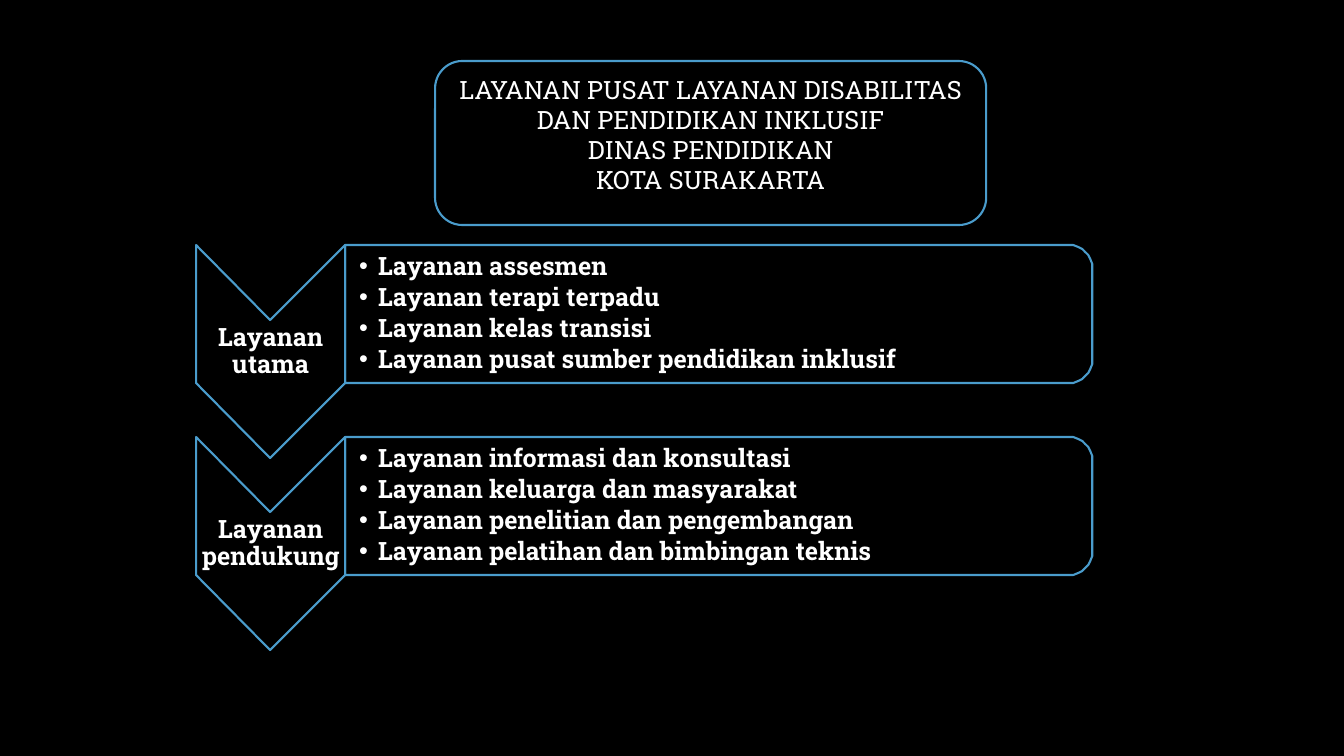
import math

from lxml import etree
from pptx import Presentation
from pptx.dml.color import RGBColor
from pptx.enum.shapes import MSO_SHAPE
from pptx.enum.text import MSO_ANCHOR, MSO_AUTO_SIZE, PP_ALIGN
from pptx.oxml.ns import qn
from pptx.util import Inches, Pt

ROUNDED = MSO_SHAPE.ROUNDED_RECTANGLE
TOP, MIDDLE = MSO_ANCHOR.TOP, MSO_ANCHOR.MIDDLE
LEFT, CENTER = PP_ALIGN.LEFT, PP_ALIGN.CENTER
NO_AUTOFIT = MSO_AUTO_SIZE.NONE

BLACK = RGBColor(0x00, 0x00, 0x00)
WHITE = RGBColor(0xFF, 0xFF, 0xFF)
BLUE = RGBColor(0x4A, 0x9C, 0xCC)
FONT = "Roboto Slab"
EMU_PER_PX = 914400 / 100.8
TWO_CONTENT_LAYOUT = 3

TITLE_BOX = (435, 61, 551, 164)
TITLE_CORNER_INSET = 8
CHEVRON_LEFT, CHEVRON_WIDTH, CHEVRON_POINT = 196, 149, 75
PANEL_LEFT, PANEL_WIDTH, PANEL_RADIUS = CHEVRON_LEFT + CHEVRON_WIDTH, 747, 23
FIRST_TOP, ROW_HEIGHT, ROW_PITCH = 245, 138, 192
BULLET_INDENT = 19

TITLE = [
    "LAYANAN PUSAT LAYANAN DISABILITAS DAN PENDIDIKAN INKLUSIF",
    "DINAS PENDIDIKAN",
    "KOTA SURAKARTA",
]
SERVICES = [
    ("Layanan utama", [
        "Layanan assesmen",
        "Layanan terapi terpadu",
        "Layanan kelas transisi",
        "Layanan pusat sumber pendidikan inklusif",
    ]),
    ("Layanan pendukung", [
        "Layanan informasi dan konsultasi",
        "Layanan keluarga dan masyarakat",
        "Layanan penelitian dan pengembangan",
        "Layanan pelatihan dan bimbingan teknis",
    ]),
]


def px(length):
    return round(length * EMU_PER_PX)


def place(shape, left, top, width, height):
    shape.left, shape.top = px(left), px(top)
    shape.width, shape.height = px(width), px(height)


def outline(shape):
    shape.shadow.inherit = False
    shape.fill.background()
    shape.line.color.rgb = BLUE
    shape.line.width = Pt(1.5)


def add_polygon(slide, points):
    builder = slide.shapes.build_freeform(*points[0], scale=EMU_PER_PX)
    builder.add_line_segments(points[1:], close=True)
    shape = builder.convert_to_shape()
    outline(shape)
    return shape


def write_text(shape, lines, anchor, alignment, insets, bold=True,
               line_spacing=0.9, space_after=0):
    """Fill the shape with one paragraph per line; insets are left, top, right, bottom in px."""
    frame = shape.text_frame
    frame.text = "\n".join(lines)
    frame.word_wrap = True
    frame.auto_size = NO_AUTOFIT
    frame.vertical_anchor = anchor
    (frame.margin_left, frame.margin_top,
     frame.margin_right, frame.margin_bottom) = map(px, insets)
    for paragraph in frame.paragraphs:
        paragraph.alignment = alignment
        paragraph.line_spacing = line_spacing
        paragraph.space_before = Pt(0)
        paragraph.space_after = Pt(space_after)
        for run in paragraph.runs:
            run.font.name = FONT
            run.font.size = Pt(18)
            run.font.bold = bold
            run.font.color.rgb = WHITE


def add_bullets(shape):
    for paragraph in shape.text_frame.paragraphs:
        properties = paragraph._p.get_or_add_pPr()
        properties.set("marL", str(px(BULLET_INDENT)))
        properties.set("indent", str(-px(BULLET_INDENT)))
        etree.SubElement(properties, qn("a:buChar")).set("char", "•")


def add_title(slide):
    left, top, width, height = TITLE_BOX
    outline(slide.shapes.add_shape(ROUNDED, *map(px, TITLE_BOX)))
    inset = TITLE_CORNER_INSET
    title = slide.shapes.title
    place(title, left + inset, top + inset, width - 2 * inset, height - 2 * inset)
    write_text(title, TITLE, TOP, CENTER, (10, 5, 10, 5), bold=False, line_spacing=1)


def add_chevron(slide, top, label):
    left, right = CHEVRON_LEFT, CHEVRON_LEFT + CHEVRON_WIDTH
    middle, bottom = (left + right) / 2, top + ROW_HEIGHT
    chevron = add_polygon(slide, [
        (right, top), (right, bottom), (middle, bottom + CHEVRON_POINT),
        (left, bottom), (left, top), (middle, top + CHEVRON_POINT),
    ])
    write_text(chevron, [label], MIDDLE, CENTER, (1, 75, 1, 75), space_after=6.3)


def corner(center_x, center_y, start_degrees):
    """Points of a quarter circle, clockwise from the start angle."""
    angles = [math.radians(start_degrees + step * 90 / 8) for step in range(9)]
    return [(center_x + PANEL_RADIUS * math.cos(angle),
             center_y + PANEL_RADIUS * math.sin(angle)) for angle in angles]


def add_service_list(slide, placeholder, top, items):
    bottom = top + ROW_HEIGHT
    corner_x = PANEL_LEFT + PANEL_WIDTH - PANEL_RADIUS
    add_polygon(slide, [
        (PANEL_LEFT, top),
        *corner(corner_x, top + PANEL_RADIUS, -90),
        *corner(corner_x, bottom - PANEL_RADIUS, 0),
        (PANEL_LEFT, bottom),
    ])
    place(placeholder, PANEL_LEFT, top, PANEL_WIDTH, ROW_HEIGHT)
    write_text(placeholder, items, MIDDLE, LEFT, (14, 8, 8, 8), space_after=2.7)
    add_bullets(placeholder)


def main():
    presentation = Presentation()
    presentation.slide_width = Inches(13.33)
    presentation.slide_height = Inches(7.5)
    slide = presentation.slides.add_slide(presentation.slide_layouts[TWO_CONTENT_LAYOUT])
    slide.background.fill.solid()
    slide.background.fill.fore_color.rgb = BLACK

    add_title(slide)
    for row, (label, items) in enumerate(SERVICES):
        top = FIRST_TOP + row * ROW_PITCH
        add_chevron(slide, top, label)
        add_service_list(slide, slide.placeholders[row + 1], top, items)

    presentation.save("out.pptx")


if __name__ == "__main__":
    main()
